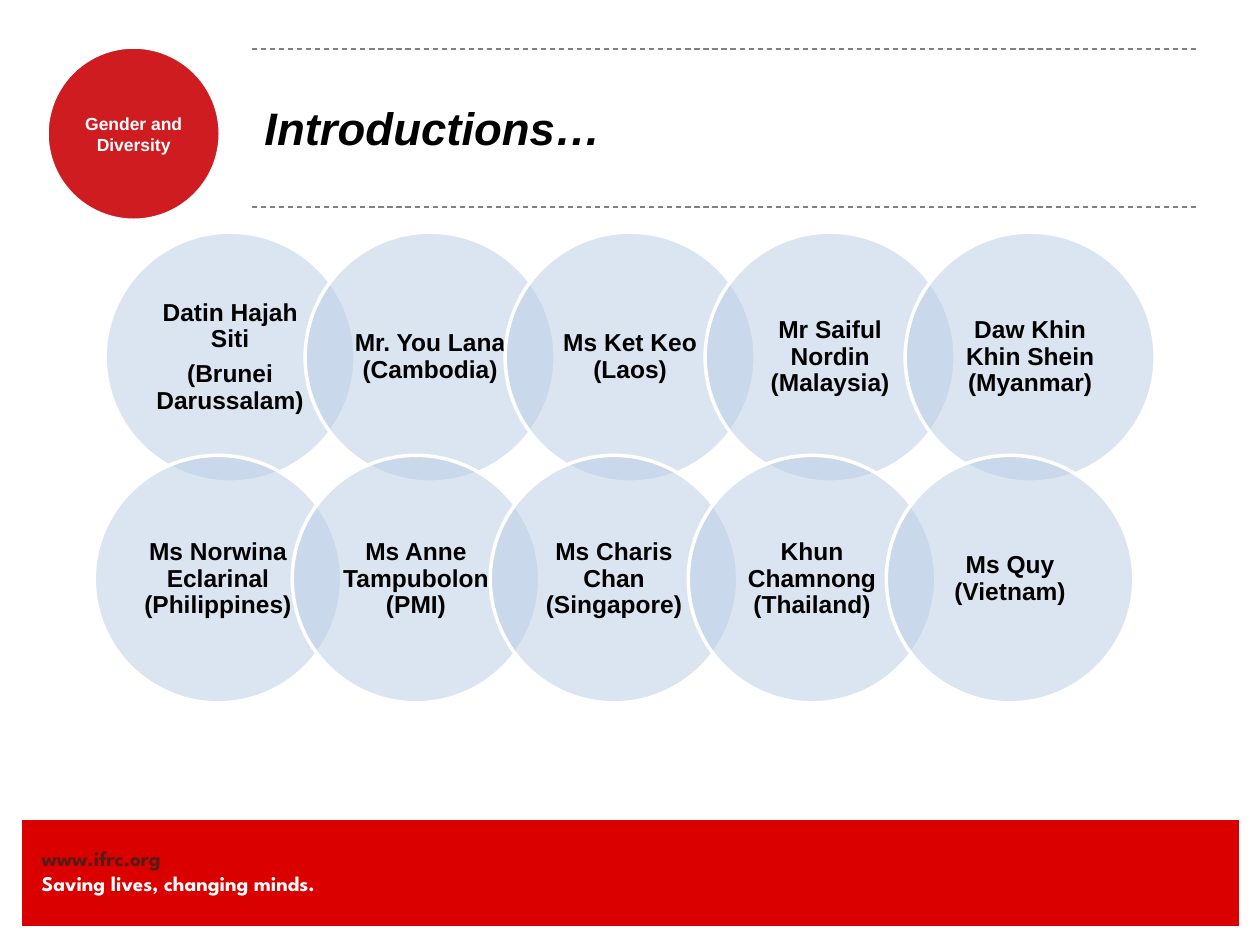
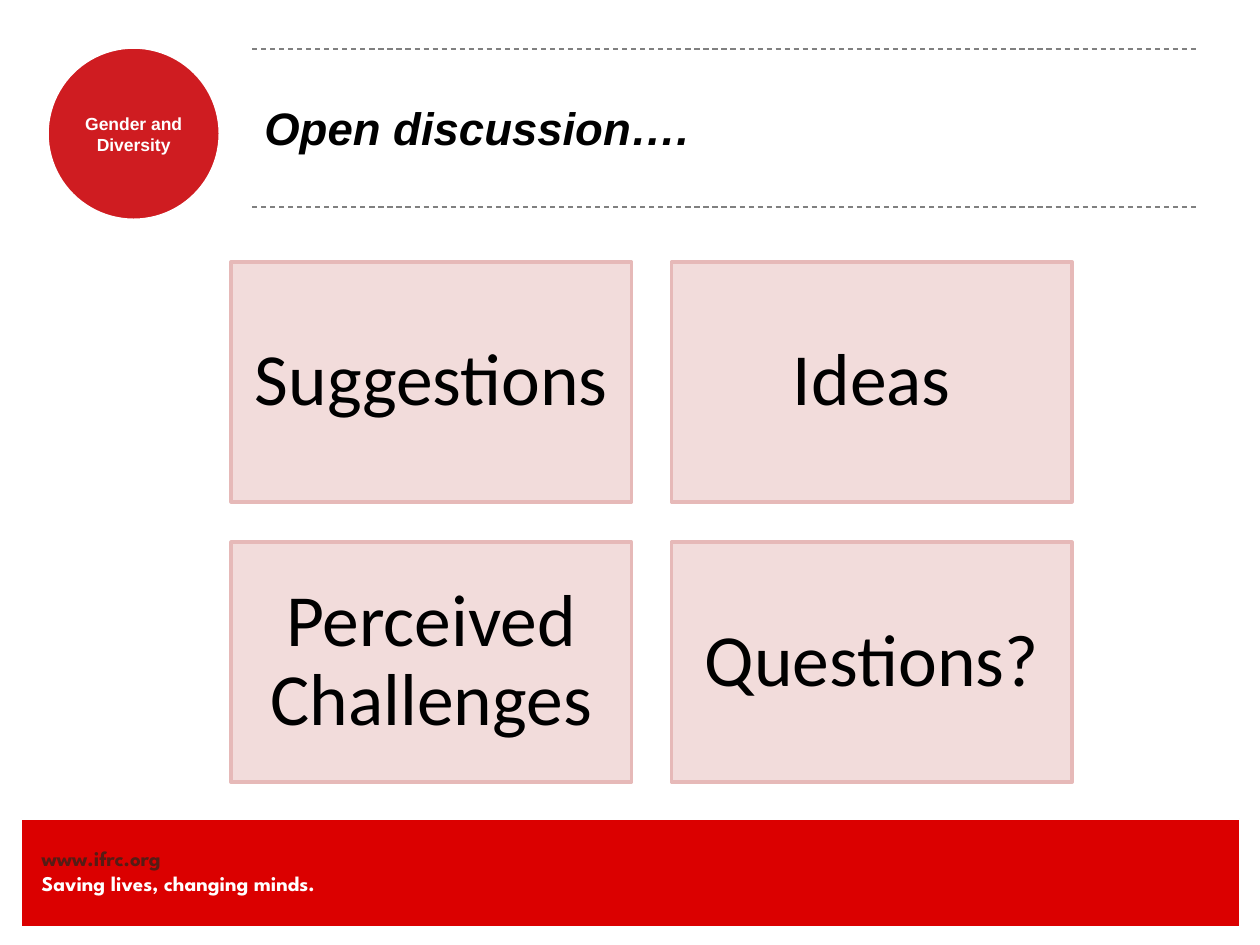
from dataclasses import dataclass

from lxml.etree import SubElement
from pptx import Presentation
from pptx.dml.color import RGBColor
from pptx.enum.dml import MSO_LINE_DASH_STYLE as Dash
from pptx.enum.shapes import MSO_CONNECTOR as Connector, MSO_SHAPE as Shape
from pptx.enum.text import MSO_ANCHOR as Anchor, MSO_AUTO_SIZE as AutoSize, PP_ALIGN as Align
from pptx.oxml.ns import qn
from pptx.util import Cm, Pt


@dataclass(frozen=True)
class Theme:
    """Colours, fonts and type sizes."""
    white: str = "FFFFFF"
    black: str = "000000"
    band: str = "DB0000"
    badge: str = "CF1C21"
    address: str = "551C15"
    rule: str = "808080"
    person: str = "B9CDE5"
    topic: str = "F2DCDB"
    topic_edge: str = "E6B9B8"
    body_font: str = "Arial"
    topic_font: str = "Calibri"
    footer_font: str = "League Spartan"
    title_size: int = 26
    person_size: int = 14
    topic_size: int = 42
    footer_size: int = 12
    badge_size: int = 10


def rgb(code):
    return RGBColor.from_string(code)


class SlideBuilder:
    def __init__(self, deck, theme):
        self.deck = deck
        self.theme = theme
        self.page = None

    def start(self, title):
        """Add a page with its title and the shared frame."""
        self.page = self.deck.slides.add_slide(self.deck.slide_layouts[5])
        self.title(title)
        self.frame()

    def title(self, words):
        theme = self.theme
        box = self.page.shapes.title
        box.left, box.top, box.width, box.height = Cm(5.08), Cm(0.97), Cm(19.05), Cm(3.18)
        box.text_frame.auto_size = AutoSize.NONE
        self.set_text(box, [words], theme.title_size, theme.body_font,
                      inset=(0.25, 0.13), align=Align.LEFT, bold=True)
        box.text_frame.paragraphs[0].font.italic = True

    def frame(self):
        theme = self.theme
        # Footer band
        self.shape(Shape.RECTANGLE, 0.43, 16.51, 24.56, 2.18, theme.band, theme.white, 0.75)
        box = self.page.shapes.add_textbox(Cm(0.84), Cm(17.04), Cm(8.69), Cm(1.02))
        self.set_text(box, ["www.ifrc.org", "Saving lives, changing minds."], theme.footer_size,
                      theme.footer_font, align=Align.LEFT, anchor=Anchor.TOP, bold=True,
                      colors=(theme.address, theme.white))
        # Round badge
        badge = self.shape(Shape.OVAL, 0.94, 0.94, 3.51, 3.51, theme.badge, theme.white, 2.5)
        self.set_text(badge, ["Gender and Diversity"], theme.badge_size, theme.body_font,
                      bold=True, colors=(theme.white,))
        # Dashed rules around the title
        for top in (0.99, 4.17):
            self.rule(5.08, 24.13, top)

    def rule(self, left, right, top):
        line = self.page.shapes.add_connector(
            Connector.STRAIGHT, Cm(left), Cm(top), Cm(right), Cm(top))
        line.line.color.rgb = rgb(self.theme.rule)
        line.line.width = Pt(0.75)
        line.line.dash_style = Dash.DASH
        SubElement(line._element.spPr, qn("a:effectLst"))

    def shape(self, kind, left, top, width, height, fill, edge, weight):
        shape = self.page.shapes.add_shape(kind, Cm(left), Cm(top), Cm(width), Cm(height))
        shape.shadow.inherit = False
        shape.fill.solid()
        shape.fill.fore_color.rgb = rgb(fill)
        shape.line.color.rgb = rgb(edge)
        shape.line.width = Pt(weight)
        return shape

    def set_text(self, shape, lines, size, font, inset=(0, 0), align=Align.CENTER,
                 anchor=Anchor.MIDDLE, bold=False, colors=None, tight=False):
        """Fill a shape with paragraphs; tight sets closer lines with a gap after each."""
        frame = shape.text_frame
        frame.word_wrap = True
        frame.vertical_anchor = anchor
        frame.margin_left = frame.margin_right = Cm(inset[0])
        frame.margin_top = frame.margin_bottom = Cm(inset[1])
        colors = colors or [self.theme.black] * len(lines)
        for index, (line, color) in enumerate(zip(lines, colors)):
            para = frame.add_paragraph() if index else frame.paragraphs[0]
            para.text = line
            para.alignment = align
            if tight:
                para.line_spacing = 0.9
                para.space_after = Pt(0.35 * size)
            para.font.name = font
            para.font.size = Pt(size)
            para.font.bold = bold
            para.font.color.rgb = rgb(color)

    def people_row(self, people, left, top, diameter):
        """Overlapping see-through circles, each a fifth over the one before."""
        theme = self.theme
        for index, lines in enumerate(people):
            circle = self.shape(Shape.OVAL, left + index * 0.8 * diameter, top, diameter,
                                diameter, theme.person, theme.white, 2)
            color = circle._element.spPr.find(qn("a:solidFill"))[0]
            SubElement(color, qn("a:alpha"), val="50000")
            self.set_text(circle, lines, theme.person_size, theme.body_font,
                          inset=(0.26, 0.05), bold=True, tight=True)

    def topic_grid(self, topics, left, top, width, height, gap, columns=2):
        theme = self.theme
        for index, topic in enumerate(topics):
            row, column = divmod(index, columns)
            card = self.shape(Shape.RECTANGLE, left + column * (width + gap),
                              top + row * (height + gap), width, height,
                              theme.topic, theme.topic_edge, 2)
            self.set_text(card, [topic], theme.topic_size, theme.topic_font,
                          inset=(0.42, 0.42), tight=True)


def main():
    deck = Presentation()
    deck.slide_width, deck.slide_height = Cm(25.4), Cm(19.05)
    builder = SlideBuilder(deck, Theme())

    # Participants
    builder.start("Introductions…")
    builder.people_row([
        ["Datin Hajah Siti", "(Brunei Darussalam)"],
        ["Mr. You Lana (Cambodia)"],
        ["Ms Ket Keo (Laos)"],
        ["Mr Saiful Nordin (Malaysia)"],
        ["Daw Khin Khin Shein (Myanmar)"],
    ], left=2.12, top=4.68, diameter=5.04)
    builder.people_row([
        ["Ms Norwina Eclarinal (Philippines)"],
        ["Ms Anne Tampubolon (PMI)"],
        ["Ms Charis Chan (Singapore)"],
        ["Khun Chamnong (Thailand)"],
        ["Ms Quy (Vietnam)"],
    ], left=1.9, top=9.18, diameter=4.99)

    # Discussion topics
    builder.start("Open discussion….")
    builder.topic_grid(["Suggestions", "Ideas", "Perceived Challenges", "Questions?"],
                       left=4.66, top=5.28, width=8.07, height=4.84, gap=0.81)

    deck.save("out.pptx")


if __name__ == "__main__":
    main()
